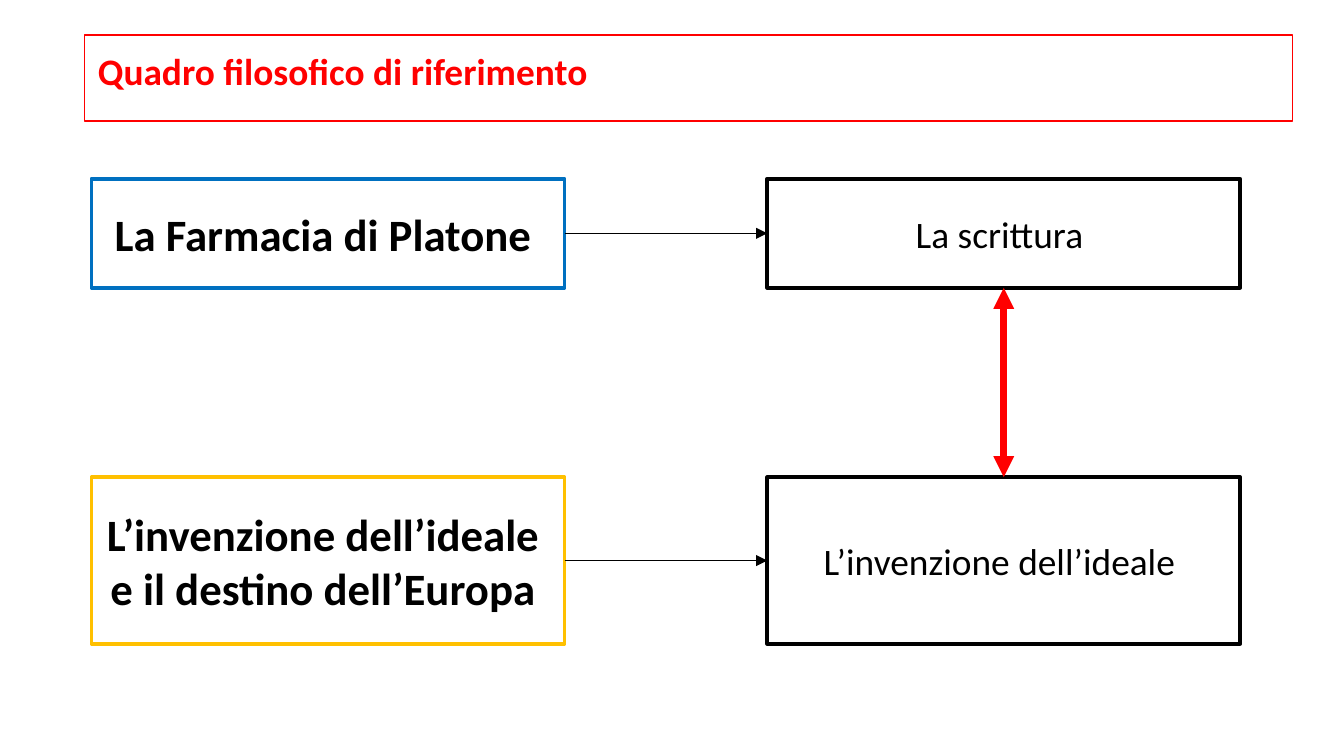
from dataclasses import dataclass

from lxml.etree import SubElement
from pptx import Presentation
from pptx.dml.color import RGBColor
from pptx.enum.shapes import MSO_CONNECTOR, MSO_SHAPE
from pptx.enum.text import MSO_ANCHOR, MSO_AUTO_SIZE, PP_ALIGN
from pptx.oxml.ns import qn
from pptx.shapes.autoshape import Shape
from pptx.slide import Slide
from pptx.util import Cm, Pt


@dataclass(frozen=True)
class Theme:
    font: str = "Calibri"
    black: str = "000000"
    red: str = "FF0000"
    blue: str = "0070C0"
    gold: str = "FFC000"
    work_size: float = 24
    text_size: float = 20
    box_line: float = 2
    thin_line: float = 0.75
    thick_line: float = 3.75


@dataclass(frozen=True)
class Box:
    lines: tuple[str, ...]
    left: float
    top: float
    height: float
    outline: str
    size: float
    bold: bool


@dataclass(frozen=True)
class Arrow:
    start: Shape
    start_site: int
    end: Shape
    end_site: int
    color: str
    width: float
    ends: tuple[str, ...] = ("tailEnd",)


THEME = Theme()
TOP, LEFT, BOTTOM, RIGHT = range(4)
BOX_WIDTH = 8.94
WORK_LEFT, THEME_LEFT = 1.73, 14.5
PLATO_ROW = {"top": 3.38, "height": 2.06}
IDEAL_ROW = {"top": 9.02, "height": 3.15}
WORK_STYLE = {"left": WORK_LEFT, "size": THEME.work_size, "bold": True}
THEME_STYLE = {"left": THEME_LEFT, "size": THEME.text_size, "bold": False,
               "outline": THEME.black}


def set_line(shape, color: str, width: float) -> None:
    shape.line.color.rgb = RGBColor.from_string(color)
    shape.line.width = Pt(width)


def write(shape: Shape, lines: tuple[str, ...], size: float, bold: bool,
          color: str, frame_format: dict, align: PP_ALIGN) -> None:
    frame = shape.text_frame
    frame.text = "\n".join(lines)
    for name, value in frame_format.items():
        setattr(frame, name, value)
    font_format = {"name": THEME.font, "size": Pt(size), "bold": bold}
    for paragraph in frame.paragraphs:
        paragraph.alignment = align
        for run in paragraph.runs:
            for name, value in font_format.items():
                setattr(run.font, name, value)
            run.font.color.rgb = RGBColor.from_string(color)


def draw_heading(slide: Slide, text: str) -> None:
    heading = slide.shapes.title
    place = {"left": 1.6, "top": 0.66, "width": 22.83, "height": 1.63}
    for name, value in place.items():
        setattr(heading, name, Cm(value))
    set_line(heading, THEME.red, THEME.thin_line)
    margins = {f"margin_{side}": Cm(0.25)
               for side in ("left", "top", "right", "bottom")}
    frame_format = margins | {"vertical_anchor": MSO_ANCHOR.TOP,
                              "auto_size": MSO_AUTO_SIZE.NONE,
                              "word_wrap": True}
    write(heading, (text,), THEME.text_size, True, THEME.red,
          frame_format, PP_ALIGN.LEFT)


def draw_box(slide: Slide, box: Box) -> Shape:
    shape = slide.shapes.add_shape(
        MSO_SHAPE.RECTANGLE, Cm(box.left), Cm(box.top),
        Cm(BOX_WIDTH), Cm(box.height))
    shape.shadow.inherit = False
    shape.fill.background()
    set_line(shape, box.outline, THEME.box_line)
    write(shape, box.lines, box.size, box.bold, THEME.black,
          {"vertical_anchor": MSO_ANCHOR.MIDDLE, "word_wrap": True},
          PP_ALIGN.CENTER)
    return shape


def draw_arrow(slide: Slide, arrow: Arrow) -> None:
    connector = slide.shapes.add_connector(MSO_CONNECTOR.STRAIGHT, 0, 0, 0, 0)
    connector.begin_connect(arrow.start, arrow.start_site)
    connector.end_connect(arrow.end, arrow.end_site)
    set_line(connector, arrow.color, arrow.width)
    properties = connector._element.spPr
    outline = properties.find(qn("a:ln"))
    for end in arrow.ends:
        SubElement(outline, qn(f"a:{end}"), type="triangle")
    SubElement(properties, qn("a:effectLst"))


def main() -> None:
    presentation = Presentation()
    presentation.slide_width, presentation.slide_height = Cm(25.4), Cm(14.29)
    slide = presentation.slides.add_slide(presentation.slide_layouts[5])

    # Heading
    draw_heading(slide, "Quadro filosofico di riferimento")

    # Works on the left, their themes on the right
    pharmacy = draw_box(slide, Box(
        ("La Farmacia di Platone ",), outline=THEME.blue,
        **WORK_STYLE, **PLATO_ROW))
    destiny = draw_box(slide, Box(
        ("L’invenzione dell’ideale ", "e il destino dell’Europa "),
        outline=THEME.gold, **WORK_STYLE, **IDEAL_ROW))
    writing = draw_box(slide, Box(
        ("La scrittura ",), **THEME_STYLE, **PLATO_ROW))
    ideal = draw_box(slide, Box(
        ("L’invenzione dell’ideale ",), **THEME_STYLE, **IDEAL_ROW))

    # Arrows from work to theme, and between the two themes
    for arrow in (
        Arrow(pharmacy, RIGHT, writing, LEFT, THEME.black, THEME.thin_line),
        Arrow(destiny, RIGHT, ideal, LEFT, THEME.black, THEME.thin_line),
        Arrow(writing, BOTTOM, ideal, TOP, THEME.red, THEME.thick_line,
              ("headEnd", "tailEnd")),
    ):
        draw_arrow(slide, arrow)

    presentation.save("out.pptx")


if __name__ == "__main__":
    main()
